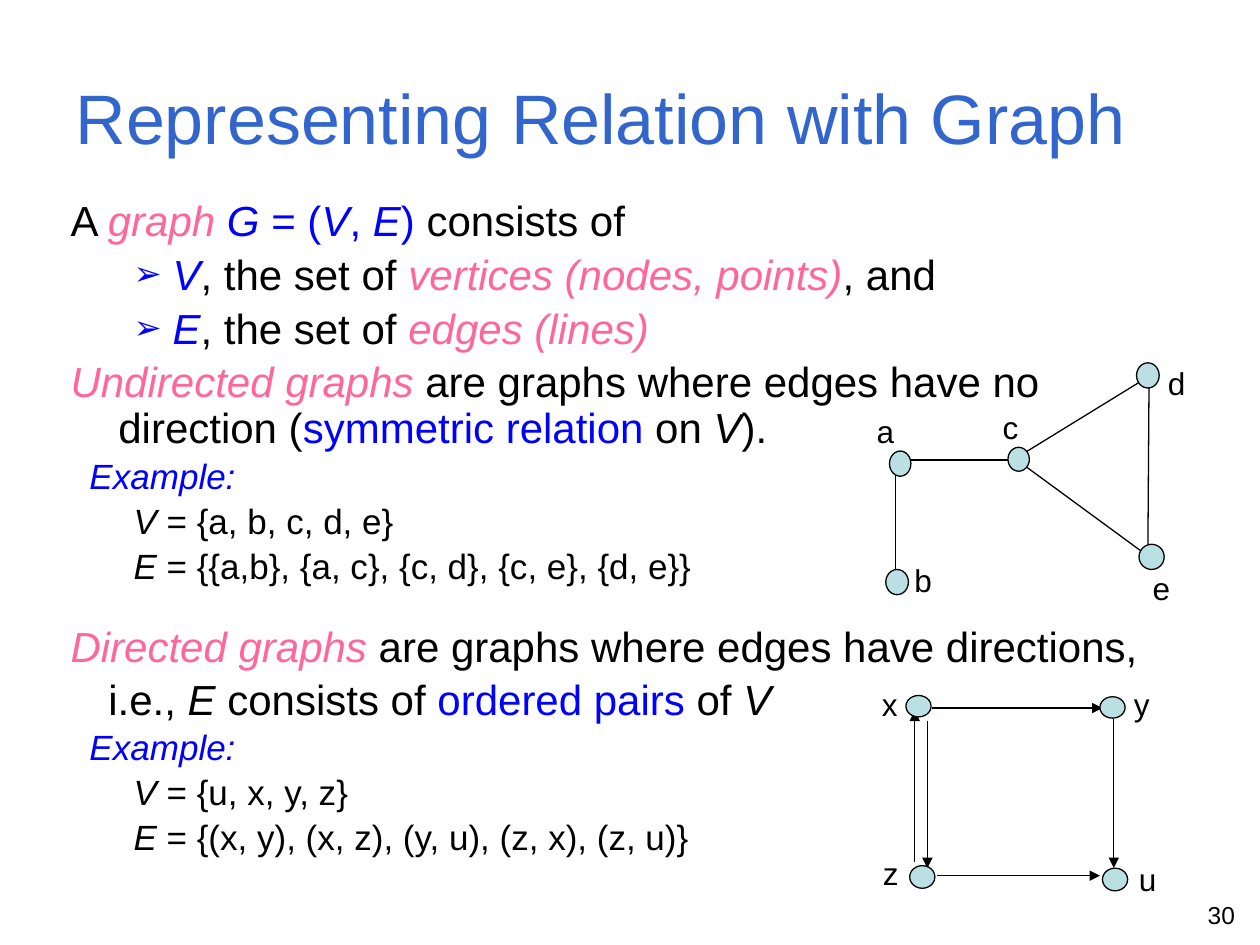
from lxml import etree
from pptx import Presentation
from pptx.dml.color import RGBColor
from pptx.enum.shapes import MSO_CONNECTOR, MSO_SHAPE
from pptx.enum.text import MSO_ANCHOR as Anchor, MSO_AUTO_SIZE as AutoSize, PP_ALIGN as Align
from pptx.oxml.ns import qn
from pptx.util import Inches, Pt

COLORS = {"title": "3366CC", "text": "000000", "term": "FF6699",
          "math": "0000FF", "node": "BBE0E3"}

# Paragraph formats: level, left margin, first-line indent, font size, line spacing
STYLES = {
    "main": {"level": 0, "left": 0.38, "first": -0.38, "size": 24, "spacing": 0.9},
    "loose": {"level": 0, "left": 0.38, "first": -0.38, "size": 24, "spacing": 1.5},
    "follow": {"level": 0, "left": 0.3, "first": 0, "size": 24, "spacing": 1.0, "before": 1.5},
    "bullet": {"level": 1, "left": 0.81, "first": -0.31, "size": 24, "spacing": 0.9},
    "example": {"level": 0, "left": 0.15, "first": 0, "size": 20, "spacing": 0.9},
    "sets": {"level": 1, "left": 0.81, "first": -0.31, "size": 20, "spacing": 0.9},
}

# Body paragraphs: style, then runs of (text, colour, italic)
BODY = [
    ("main", [("A ", "text", False), ("graph ", "term", True), ("G", "math", True),
              (" = (", "math", False), ("V", "math", True), (", ", "math", False),
              ("E", "math", True), (")", "math", False), (" consists of", "text", False)]),
    ("bullet", [("V", "math", True), (", the set of ", "text", False),
                ("vertices (nodes, points)", "term", True), (", and", "text", False)]),
    ("bullet", [("E", "math", True), (", the set of ", "text", False),
                ("edges (lines)", "term", True)]),
    ("main", [("Undirected graphs", "term", True),
              (" are graphs where edges have no direction (", "text", False),
              ("symmetric relation ", "math", False), ("on ", "text", False),
              ("V", "text", True), (").", "text", False)]),
    ("example", [("Example:", "math", True)]),
    ("sets", [("V", "text", True), (" = {a, b, c, d, e}", "text", False)]),
    ("sets", [("E", "text", True),
              (" = {{a,b}, {a, c}, {c, d}, {c, e}, {d, e}}", "text", False)]),
    ("loose", [("Directed graphs", "term", True),
               (" are graphs where edges have directions,", "text", False)]),
    ("follow", [("i.e., ", "text", False), ("E", "text", True),
                (" consists of ", "text", False), ("ordered pairs", "math", False),
                (" of ", "text", False), ("V", "text", True)]),
    ("example", [("Example:", "math", True)]),
    ("sets", [("V", "text", True), (" = {u, x, y, z}", "text", False)]),
    ("sets", [("E", "text", True),
              (" = {(x, y), (x, z), (y, u), (z, x), (z, u)}", "text", False)]),
]

# Graphs: edges as (x1, y1, x2, y2), labels as (left, top), nodes as (left, top, width, height)
UNDIRECTED = {
    "arrows": False,
    "edges": [(7.1, 3.65, 8.07, 3.65), (8.07, 3.65, 9.12, 4.42), (8.04, 3.65, 9.13, 2.98),
              (9.12, 2.98, 9.11, 4.42), (7.11, 3.65, 7.11, 4.54)],
    "labels": {"a": (6.86, 3.22), "b": (7.16, 4.4), "c": (7.86, 3.19),
               "d": (9.17, 2.84), "e": (9.05, 4.47)},
    "nodes": [(9.02, 2.88, 0.18, 0.2), (9.04, 4.32, 0.2, 0.2), (8, 3.55, 0.17, 0.19),
              (7.06, 3.58, 0.17, 0.2), (7.03, 4.52, 0.18, 0.2)],
}
DIRECTED = {
    "arrows": True,
    "edges": [(7.4, 5.62, 8.75, 5.62), (7.36, 5.72, 7.36, 6.89), (7.26, 6.84, 7.26, 5.64),
              (7.44, 6.95, 8.73, 6.95), (8.84, 5.71, 8.84, 6.89)],
    "labels": {"z": (6.91, 6.73), "x": (6.9, 5.39), "y": (8.9, 5.39), "u": (8.94, 6.78)},
    "nodes": [(7.22, 6.87, 0.2, 0.18), (7.19, 5.52, 0.2, 0.17),
              (8.73, 5.53, 0.2, 0.17), (8.75, 6.89, 0.2, 0.18)],
}


def rgb(name):
    return RGBColor.from_string(COLORS[name])


def place(shape, left, top, width, height):
    box = {"left": left, "top": top, "width": width, "height": height}
    for name, value in box.items():
        setattr(shape, name, Inches(value))


def add_run(paragraph, text, size, color="text", italic=False):
    run = paragraph.add_run()
    run.text = text
    formats = {"name": "Arial", "size": Pt(size), "italic": italic}
    for name, value in formats.items():
        setattr(run.font, name, value)
    run.font.color.rgb = rgb(color)


def set_indent(paragraph, left, first, bullet):
    properties = paragraph._p.get_or_add_pPr()
    properties.set("marL", str(Inches(left)))
    properties.set("indent", str(Inches(first)))
    if bullet:
        etree.SubElement(properties, qn("a:buSzPct"), val="80000")
        etree.SubElement(properties, qn("a:buFont"), typeface="Arial")
        etree.SubElement(properties, qn("a:buChar"), char="➢")
    else:
        etree.SubElement(properties, qn("a:buNone"))


def fill_title(title):
    place(title, 0.5, 0.3, 9, 1.25)
    frame = title.text_frame
    frame.vertical_anchor = Anchor.MIDDLE
    frame.auto_size = AutoSize.NONE
    paragraph = frame.paragraphs[0]
    paragraph.alignment = Align.LEFT
    add_run(paragraph, "Representing Relation with Graph", 40, "title")


def fill_body(body):
    place(body, 0.46, 1.54, 9, 5.96)
    frame = body.text_frame
    frame.auto_size = AutoSize.NONE
    for index, (style_name, runs) in enumerate(BODY):
        style = STYLES[style_name]
        paragraph = frame.add_paragraph() if index else frame.paragraphs[0]
        paragraph.level = style["level"]
        paragraph.line_spacing = style["spacing"]
        if "before" in style:
            paragraph.space_before = Pt(style["before"])
        set_indent(paragraph, style["left"], style["first"], style_name == "bullet")
        for text, color, italic in runs:
            add_run(paragraph, text, style["size"], color, italic)


def add_label(shapes, text, size, box, alignment=Align.LEFT):
    label = shapes.add_textbox(*map(Inches, box))
    label.text_frame.word_wrap = True
    paragraph = label.text_frame.paragraphs[0]
    paragraph.alignment = alignment
    add_run(paragraph, text, size)


def add_edge(shapes, ends, arrow):
    edge = shapes.add_connector(MSO_CONNECTOR.STRAIGHT, *map(Inches, ends))
    edge.line.color.rgb = rgb("text")
    edge.line.width = Pt(0.75)
    if arrow:
        etree.SubElement(edge.line._get_or_add_ln(), qn("a:tailEnd"), type="triangle")
    etree.SubElement(edge._element.spPr, qn("a:effectLst"))


def add_node(shapes, box):
    node = shapes.add_shape(MSO_SHAPE.OVAL, *map(Inches, box))
    node.shadow.inherit = False
    node.fill.solid()
    node.fill.fore_color.rgb = rgb("node")
    node.line.color.rgb = rgb("text")
    node.line.width = Pt(0.75)


def add_graph(slide, graph):
    shapes = slide.shapes.add_group_shape().shapes
    for ends in graph["edges"]:
        add_edge(shapes, ends, graph["arrows"])
    for text, (left, top) in graph["labels"].items():
        add_label(shapes, text, 18, (left, top, 0.43, 0.4))
    for box in graph["nodes"]:
        add_node(shapes, box)


def main():
    presentation = Presentation()
    presentation.slide_width = Inches(10)
    presentation.slide_height = Inches(7.5)
    slide = presentation.slides.add_slide(presentation.slide_layouts[1])

    # Text
    fill_title(slide.shapes.title)
    fill_body(slide.placeholders[1])
    add_label(slide.shapes, "30", 14, (7.57, 7.09, 2.33, 0.31), Align.RIGHT)

    # Graph drawings
    for graph in (UNDIRECTED, DIRECTED):
        add_graph(slide, graph)

    presentation.save("out.pptx")


if __name__ == "__main__":
    main()
